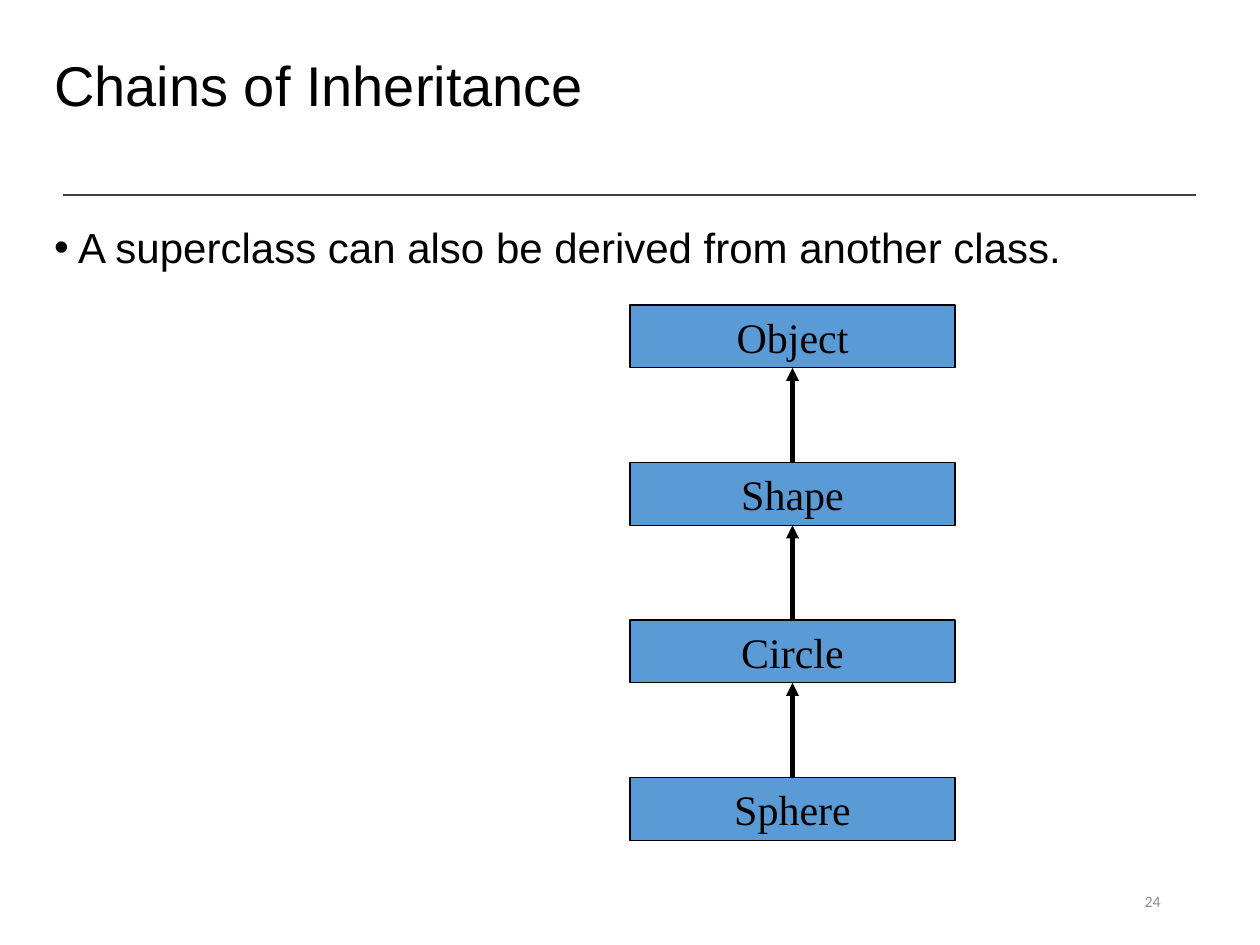
from lxml import etree
from pptx import Presentation
from pptx.dml.color import RGBColor
from pptx.enum.shapes import MSO_CONNECTOR, MSO_SHAPE
from pptx.enum.text import MSO_ANCHOR, MSO_AUTO_SIZE, PP_ALIGN
from pptx.oxml.ns import qn
from pptx.util import Inches, Pt

RECT, STRAIGHT = MSO_SHAPE.RECTANGLE, MSO_CONNECTOR.STRAIGHT
TOP, MIDDLE = MSO_ANCHOR.TOP, MSO_ANCHOR.MIDDLE
LEFT, CENTER, RIGHT = PP_ALIGN.LEFT, PP_ALIGN.CENTER, PP_ALIGN.RIGHT
COLORS = {"text": "000000", "box": "5B9BD5", "rule": "404040", "number": "8C8C8C"}

prs = Presentation()
prs.slide_width, prs.slide_height = Inches(10), Inches(7.5)
s = prs.slides.add_slide(prs.slide_layouts[1])


def write(sp, text, size, font, color, frame, para):
    tf = sp.text_frame
    for name, value in frame.items():
        setattr(tf, name, value)
    p = tf.paragraphs[0]
    for name, value in para.items():
        setattr(p, name, value)
    r = p.add_run()
    r.text = text
    r.font.size, r.font.name = Pt(size), font
    r.font.color.rgb = RGBColor.from_string(COLORS[color])
    return p


def add_line(x1, y1, x2, y2, color, width):
    line = s.shapes.add_connector(STRAIGHT, *map(Inches, (x1, y1, x2, y2)))
    line.line.color.rgb = RGBColor.from_string(COLORS[color])
    line.line.width = Pt(width)
    etree.SubElement(line._element.spPr, qn("a:effectLst"))
    return line


# Rule under the title
add_line(0.5, 1.55, 9.49, 1.55, "rule", 1)

# Title and bullet
title, body = s.shapes.title, s.placeholders[1]
for sp, box in ((title, (0.33, 0.08, 9, 1.25)), (body, (0.33, 1.75, 9.07, 1.29))):
    sp.left, sp.top, sp.width, sp.height = map(Inches, box)
fixed = {"word_wrap": True, "auto_size": MSO_AUTO_SIZE.NONE}
para = {"alignment": LEFT, "line_spacing": 0.9}
write(title, "Chains of Inheritance", 32, "Arial", "text",
      {**fixed, "vertical_anchor": MIDDLE}, para)
p = write(body, "A superclass can also be derived from another class.", 24, "Arial", "text",
          {**fixed, "vertical_anchor": TOP}, {**para, "space_before": Pt(7.5)})
pPr = p._p.get_or_add_pPr()
pPr.set("marL", str(Inches(0.19)))
pPr.set("indent", str(Inches(-0.19)))
etree.SubElement(pPr, qn("a:buFont"), typeface="Arial")
etree.SubElement(pPr, qn("a:buChar"), char="•")

# Class chain: each box points up to its superclass
x, y0, w, h, step = 5, 2.42, 2.58, 0.5, 1.25
for i, name in enumerate(("Object", "Shape", "Circle", "Sphere")):
    y = y0 + i * step
    sp = s.shapes.add_shape(RECT, *map(Inches, (x, y, w, h)))
    sp.shadow.inherit = False
    sp.fill.solid()
    sp.fill.fore_color.rgb = RGBColor.from_string(COLORS["box"])
    sp.line.color.rgb = RGBColor.from_string(COLORS["text"])
    sp.line.width = Pt(0.75)
    write(sp, name, 24, "Times New Roman", "text",
          {"word_wrap": False, "vertical_anchor": MIDDLE}, {"alignment": CENTER})
    if i:
        arrow = add_line(x + w / 2, y, x + w / 2, y - step + h, "text", 2.5)
        etree.SubElement(arrow.line._get_or_add_ln(), qn("a:tailEnd"), type="triangle")

# Slide number
sp = s.shapes.add_textbox(*map(Inches, (7.06, 6.95, 2.25, 0.4)))
write(sp, "24", 9, "Calibri", "number",
      {"word_wrap": True, "vertical_anchor": MIDDLE}, {"alignment": RIGHT})

prs.save("out.pptx")
